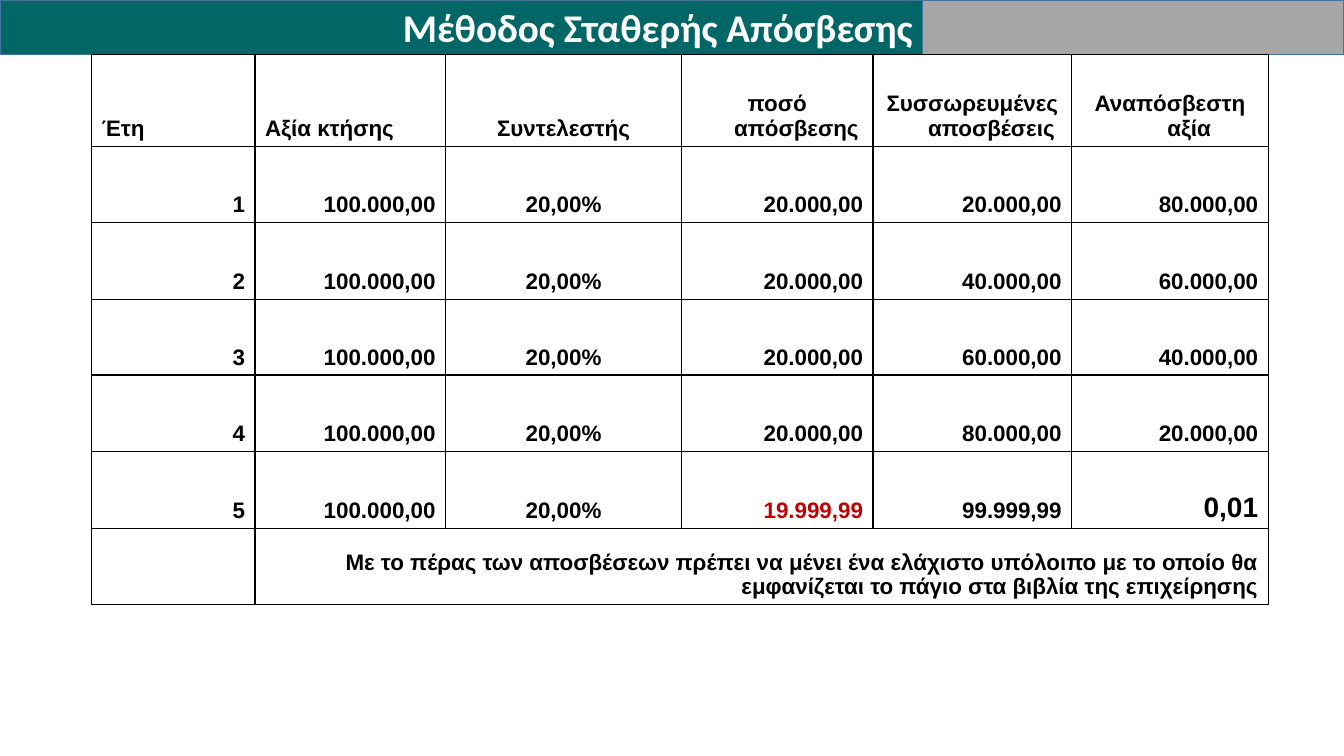
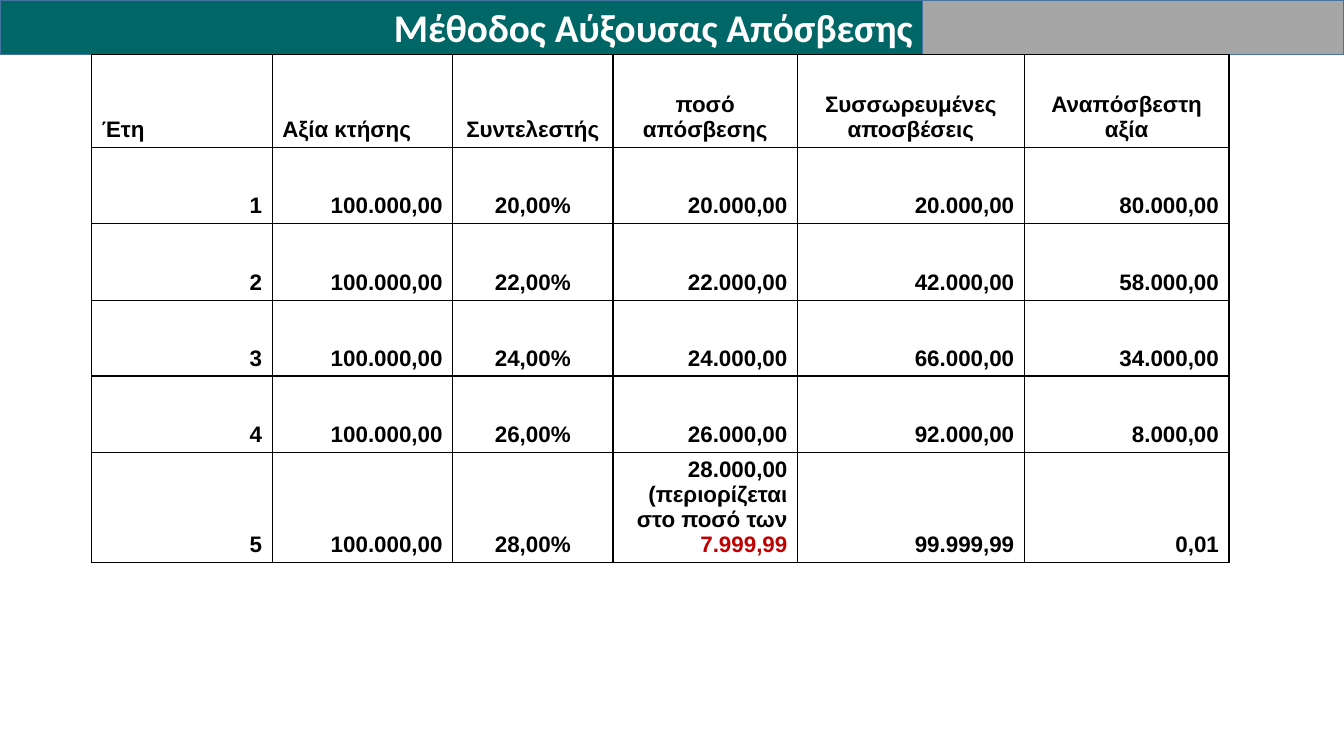
from dataclasses import dataclass
from itertools import product

from lxml import etree
from pptx import Presentation, util as u
from pptx.dml.color import RGBColor
from pptx.enum import shapes, text
from pptx.oxml import ns

WIDE, HIGH = 13.33, 7.5
BAND, SPLIT = 0.54, 9.15
LEFT = 0.91
HANG = 0.38
COST = "100.000,00"

TEAL = RGBColor(0x00, 0x66, 0x66)
GREY = RGBColor(0xA6, 0xA6, 0xA6)
EDGE = RGBColor(0x43, 0x73, 0x9E)
WHITE = RGBColor(0xFF, 0xFF, 0xFF)
BLACK = RGBColor(0x00, 0x00, 0x00)
RED = RGBColor(0xC0, 0x00, 0x00)

START, MID, END = text.PP_ALIGN.LEFT, text.PP_ALIGN.CENTER, text.PP_ALIGN.RIGHT
HEADS = ("Έτη", "Αξία κτήσης", "Συντελεστής", "ποσό απόσβεσης",
         "Συσσωρευμένες αποσβέσεις", "Αναπόσβεστη αξία")
TOPS = (START, START, MID, MID, MID, MID)
SIDES = (END, END, MID, END, END, END)


@dataclass(frozen=True)
class Year:
    rate: str
    charge: str
    total: str
    rest: str
    red: str = ""


@dataclass(frozen=True)
class Plan:
    title: str
    cols: tuple[float, ...]
    rows: tuple[float, ...]
    years: tuple[Year, ...]
    hang: float = 0
    last: int = 16
    note: str = ""


PLANS = (
    Plan(
        "Μέθοδος Σταθερής Απόσβεσης",
        (1.62, 1.89, 2.34, 1.9, 1.97, 1.95),
        (0.91, 0.76, 0.76, 0.75, 0.76, 0.76, 0.76),
        (
            Year("20,00%", "20.000,00", "20.000,00", "80.000,00"),
            Year("20,00%", "20.000,00", "40.000,00", "60.000,00"),
            Year("20,00%", "20.000,00", "60.000,00", "40.000,00"),
            Year("20,00%", "20.000,00", "80.000,00", "20.000,00"),
            Year("20,00%", "", "99.999,99", "0,01", "19.999,99"),
        ),
        HANG,
        20,
        "Με το πέρας των αποσβέσεων πρέπει να μένει ένα ελάχιστο υπόλοιπο "
        "με το οποίο θα εμφανίζεται το πάγιο στα βιβλία της επιχείρησης",
    ),
    Plan(
        "Μέθοδος Αύξουσας Απόσβεσης",
        (1.79, 1.79, 1.59, 1.83, 2.25, 2.03),
        (0.92, 0.76, 0.76, 0.75, 0.76, 0.76),
        (
            Year("20,00%", "20.000,00", "20.000,00", "80.000,00"),
            Year("22,00%", "22.000,00", "42.000,00", "58.000,00"),
            Year("24,00%", "24.000,00", "66.000,00", "34.000,00"),
            Year("26,00%", "26.000,00", "92.000,00", "8.000,00"),
            Year("28,00%", "28.000,00 (περιορίζεται στο ποσό των ",
                 "99.999,99", "0,01", "7.999,99"),
        ),
    ),
)


def style(run, face: str, size: int, hue: RGBColor) -> None:
    font = run.font
    font.name, font.size, font.bold = face, u.Pt(size), True
    font.color.rgb = hue


def paint(shape, fill: RGBColor) -> None:
    shape.fill.solid()
    shape.fill.fore_color.rgb = fill
    shape.line.color.rgb = EDGE
    shape.line.width = u.Pt(1)


def head(slide, title: str) -> None:
    bar = slide.shapes.title
    bar.left, bar.top = 0, 0
    bar.width, bar.height = u.Inches(SPLIT), u.Inches(BAND)
    paint(bar, TEAL)
    frame = bar.text_frame
    frame.text = title
    frame.word_wrap = True
    frame.auto_size = text.MSO_AUTO_SIZE.NONE
    frame.vertical_anchor = text.MSO_ANCHOR.MIDDLE
    para = frame.paragraphs[0]
    para.alignment = END
    style(para.runs[0], "Calibri", 28, WHITE)
    block = slide.shapes.add_shape(
        shapes.MSO_SHAPE.RECTANGLE, u.Inches(SPLIT), 0,
        u.Inches(WIDE - SPLIT), u.Inches(BAND))
    block.shadow.inherit = False
    paint(block, GREY)


def frame_cell(cell) -> None:
    cell.fill.background()
    props = cell._tc.get_or_add_tcPr()
    for spot, side in enumerate(("lnL", "lnR", "lnT", "lnB")):
        line = etree.Element(ns.qn(f"a:{side}"), w=str(u.Pt(1)))
        fill = etree.SubElement(line, ns.qn("a:solidFill"))
        etree.SubElement(fill, ns.qn("a:srgbClr"), val=str(BLACK))
        props.insert(spot, line)


def write(cell, words: str, side: text.PP_ALIGN, hang: float,
          size: int = 16, red: str = "") -> None:
    cell.vertical_anchor = text.MSO_ANCHOR.BOTTOM
    para = cell.text_frame.paragraphs[0]
    para.alignment = side
    if hang:
        props = para._p.get_or_add_pPr()
        props.set("marL", str(u.Inches(hang)))
        props.set("indent", str(-u.Inches(hang)))
    for part, hue in ((words, BLACK), (red, RED)):
        if part:
            run = para.add_run()
            run.text = part
            style(run, "Arial", size, hue)


def chart_plan(slide, plan: Plan) -> None:
    rows, cols = len(plan.rows), len(plan.cols)
    grid = slide.shapes.add_table(
        rows, cols, u.Inches(LEFT), u.Inches(BAND),
        u.Inches(sum(plan.cols)), u.Inches(sum(plan.rows))).table
    grid.first_row = grid.horz_banding = False
    for col, width in zip(grid.columns, plan.cols):
        col.width = u.Inches(width)
    for row, height in zip(grid.rows, plan.rows):
        row.height = u.Inches(height)
    for row, col in product(range(rows), range(cols)):
        frame_cell(grid.cell(row, col))
    for col, (words, side) in enumerate(zip(HEADS, TOPS)):
        write(grid.cell(0, col), words, side, plan.hang)
    for row, year in enumerate(plan.years, 1):
        line = (str(row), COST, year.rate, year.charge, year.total, year.rest)
        for col, (words, side) in enumerate(zip(line, SIDES)):
            final = row == len(plan.years) and col == cols - 1
            write(grid.cell(row, col), words, side, plan.hang,
                  plan.last if final else 16, year.red if col == 3 else "")
    if plan.note:
        cell = grid.cell(rows - 1, 1)
        cell.merge(grid.cell(rows - 1, cols - 1))
        write(cell, plan.note, END, plan.hang)


def main() -> None:
    deck = Presentation()
    deck.slide_width, deck.slide_height = u.Inches(WIDE), u.Inches(HIGH)
    for plan in PLANS:
        slide = deck.slides.add_slide(deck.slide_layouts[5])
        head(slide, plan.title)
        chart_plan(slide, plan)
    deck.save("out.pptx")


if __name__ == "__main__":
    main()
